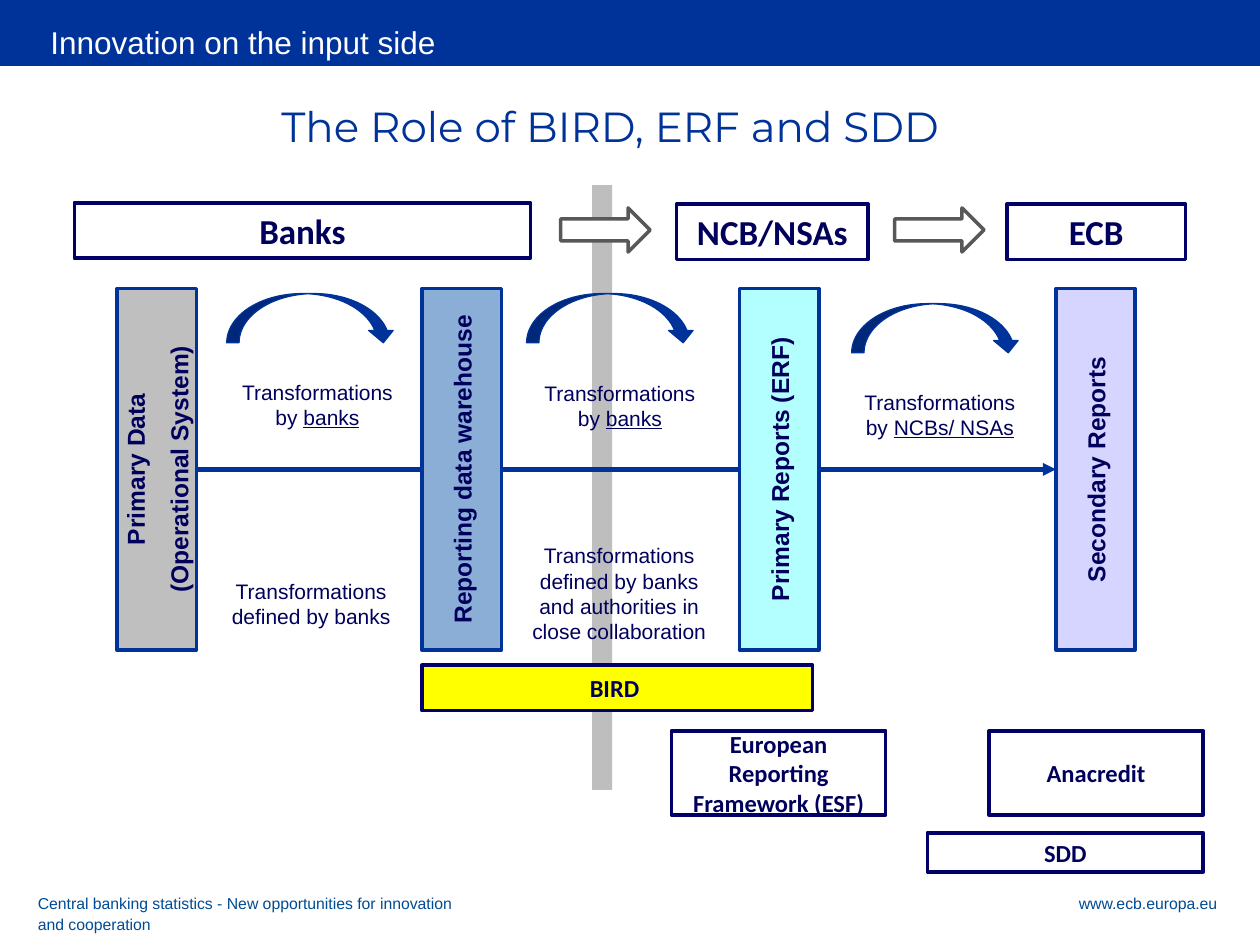
from pptx import Presentation
from pptx.dml.color import RGBColor
from pptx.enum.dml import MSO_LINE
from pptx.enum.shapes import MSO_CONNECTOR as Wire, MSO_SHAPE as Form
from pptx.enum.text import MSO_ANCHOR as Anchor, MSO_AUTO_SIZE as Fit, PP_ALIGN as Align
from pptx.oxml.ns import qn
from pptx.util import Inches, Pt
from lxml.etree import SubElement

INK = {
    "blue": "003399", "navy": "000066", "text": "00005C", "foot": "004B95",
    "white": "FFFFFF", "bar": "BEBEBE", "gray": "BFBFBF", "steel": "8AAED6",
    "cyan": "B3FFFF", "lilac": "D5D5FF", "dark": "585858", "yellow": "FFFF00",
}


def color(name):
    """Return the named colour."""
    return RGBColor.from_string(INK[name])


def place(box, x, y, w, h):
    """Turn a spot inside a region's box into slide lengths."""
    return [Inches(v) for v in (box[0] + x, box[1] + y, w, h)]


def style(para, size, ink="text", font="Arial", bold=False, align=Align.CENTER):
    """Set the font and alignment of one paragraph."""
    para.alignment = align
    para.font.size, para.font.name, para.font.bold = Pt(size), font, bold
    para.font.color.rgb = color(ink)


def draw(slide, form, spot, fill, line=None, width=2):
    """Add a flat preset shape."""
    shape = slide.shapes.add_shape(form, *spot)
    shape.shadow.inherit = False
    shape.fill.solid()
    shape.fill.fore_color.rgb = color(fill)
    if line:
        shape.line.color.rgb = color(line)
        shape.line.width = Pt(width)
    else:
        shape.line.fill.background()
    return shape


def label(slide, spot, text, size=14, fill="white"):
    """Add a navy-framed box with a bold caption."""
    shape = draw(slide, Form.RECTANGLE, spot, fill, "navy")
    frame = shape.text_frame
    frame.word_wrap, frame.vertical_anchor = True, Anchor.MIDDLE
    frame.text = text
    style(frame.paragraphs[0], size, font="Calibri", bold=True)


def note(slide, spot, text, under="", size=12, **look):
    """Add a wrapped text box whose last words may be underlined."""
    frame = slide.shapes.add_textbox(*spot).text_frame
    frame.word_wrap = True
    para = frame.paragraphs[0]
    para.add_run().text = text
    if under:
        run = para.add_run()
        run.text, run.font.underline = under, True
    style(para, size, **look)
    return frame


def stage(slide, spot, lines, fill):
    """Add a tall box with text that reads upwards."""
    shape = draw(slide, Form.RECTANGLE, spot, fill, "blue")
    frame = shape.text_frame
    frame.text = "\n".join(lines)
    frame.word_wrap, frame.vertical_anchor = False, Anchor.MIDDLE
    frame._txBody.bodyPr.set("vert", "vert270")
    for para in frame.paragraphs:
        style(para, 14, bold=True)
        para.space_before = Pt(8)
    return shape


def header(slide, box):
    """Draw the band, the slide title and the heading."""
    draw(slide, Form.RECTANGLE, place(box, 0, 0, 10, 0.52), "blue", "blue", 0.75)
    title = slide.shapes.title
    title.left, title.top, title.width, title.height = place(box, 0.3, 0.13, 9.35, 0.39)
    frame = title.text_frame
    frame.text = "Innovation on the input side"
    frame.auto_size, frame.vertical_anchor = Fit.NONE, Anchor.TOP
    style(frame.paragraphs[0], 18, "white", align=Align.LEFT)
    slide.shapes._spTree.append(title._element)
    head = note(slide, place(box, 0.62, 0.76, 8.53, 0.48),
                "The Role of BIRD, ERF and SDD ", size=24, ink="blue", font="Montserrat")
    head.vertical_anchor = Anchor.MIDDLE


def actors(slide, box):
    """Draw the row of institutions and the arrows between them."""
    for x, y, w, text in ((0, 0, 3.62, "Banks"), (4.78, 0.01, 1.52, "NCB/NSAs"),
                          (7.4, 0.01, 1.42, "ECB")):
        label(slide, place(box, x, y, w, 0.44), text, 20)
    for x in (3.86, 6.51):
        draw(slide, Form.RIGHT_ARROW, place(box, x, 0.04, 0.71, 0.35), "white", "dark")


def flow(slide, box):
    """Draw the four data stages, their link and the steps between them."""
    ends = place(box, 0.63, 1.44, 7.45, 1.44)
    link = slide.shapes.add_connector(Wire.STRAIGHT, ends[0], ends[1], ends[0], ends[1])
    link.line.color.rgb, link.line.width = color("blue"), Pt(2.5)
    link.line.dash_style = MSO_LINE.SOLID
    SubElement(link.line._get_or_add_ln(), qn("a:tailEnd"), type="triangle")
    SubElement(link._element.spPr, qn("a:effectLst"))
    stages = [stage(slide, place(box, x, 0, 0.63, 2.87), lines, fill) for x, lines, fill in (
        (0, ["Primary Data", "(Operational System)"], "gray"),
        (2.42, ["Reporting data warehouse"], "steel"),
        (4.94, ["Primary Reports (ERF)"], "cyan"),
        (7.45, ["Secondary Reports"], "lilac"))]
    link.begin_connect(stages[0], 3)
    link.end_connect(stages[-1], 1)
    for x, y, left, top, who in ((0.87, 0.04, 0.84, 0.67, "banks"),
                                 (3.25, 0.04, 3.24, 0.68, "banks"),
                                 (5.83, 0.12, 5.78, 0.75, "NCBs/ NSAs")):
        draw(slide, Form.CURVED_DOWN_ARROW, place(box, x, y, 1.34, 0.39), "blue", "blue", 0.75)
        note(slide, place(box, left, top, 1.5, 0.51), "Transformations by ", who)
    note(slide, place(box, 0.79, 2.25, 1.5, 0.51), "Transformations defined by banks")
    note(slide, place(box, 3.15, 1.97, 1.67, 0.91),
         "Transformations defined by banks and authorities in close collaboration")


def scopes(slide, box):
    """Draw the boxes that name the frameworks."""
    for x, y, w, h, text, fill in (
            (0, 0, 3.1, 0.36, "BIRD ", "yellow"),
            (1.98, 0.52, 1.7, 0.67, "European Reporting Framework (ESF)", "white"),
            (4.5, 0.52, 1.7, 0.67, "Anacredit", "white"),
            (4.01, 1.33, 2.19, 0.31, "SDD", "white")):
        label(slide, place(box, x, y, w, h), text, fill=fill)


def footer(slide, box):
    """Write the event name and the web address."""
    for x, w, text, align in (
            (0, 3.51, "Central banking statistics - New opportunities for innovation "
                      "and cooperation", Align.LEFT),
            (6.85, 2.51, "www.ecb.europa.eu", Align.RIGHT)):
        frame = note(slide, place(box, x, 0, w, 0.21), text, size=9, ink="foot", align=align)
        frame.margin_left = frame.margin_right = frame.margin_top = frame.margin_bottom = 0
        frame.paragraphs[0].line_spacing = Pt(12)


def main():
    """Build and save the slide."""
    deck = Presentation()
    deck.slide_width, deck.slide_height = Inches(10), Inches(7.5)
    slide = deck.slides.add_slide(deck.slide_layouts[5])
    header(slide, (0, 0))
    draw(slide, Form.RECTANGLE, place((4.7, 1.47), 0, 0, 0.16, 4.8), "bar")
    flow(slide, (0.93, 2.29))
    actors(slide, (0.59, 1.61))
    scopes(slide, (3.35, 5.28))
    footer(slide, (0.3, 7.08))
    deck.save("out.pptx")


if __name__ == "__main__":
    main()
